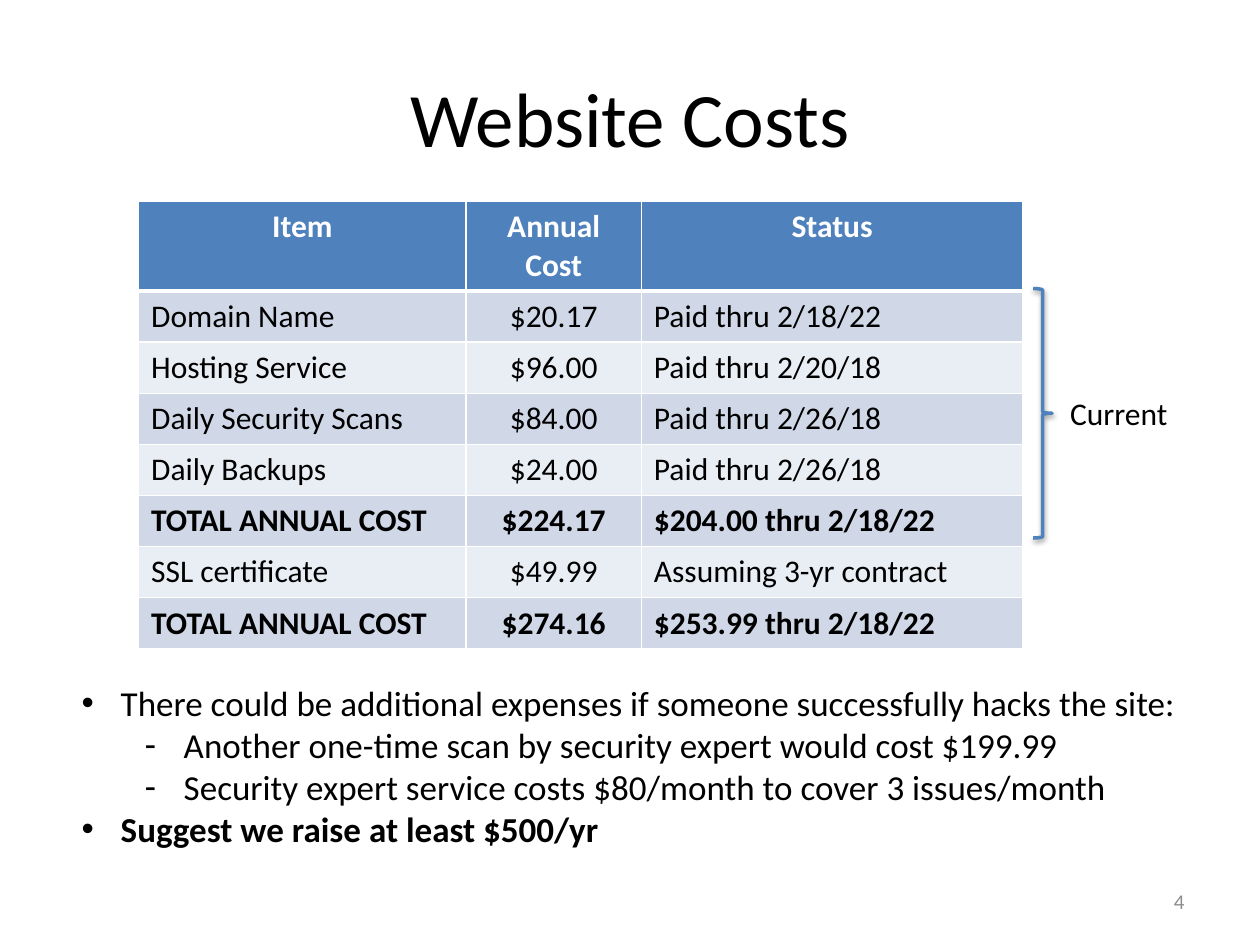
from dataclasses import dataclass

from lxml import etree
from pptx import Presentation
from pptx.dml.color import RGBColor
from pptx.enum.shapes import MSO_SHAPE
from pptx.enum.text import MSO_ANCHOR, PP_ALIGN
from pptx.oxml import parse_xml
from pptx.oxml.ns import nsdecls, qn
from pptx.util import Inches, Pt

LEFT, CENTER, RIGHT = PP_ALIGN.LEFT, PP_ALIGN.CENTER, PP_ALIGN.RIGHT
TOP, MIDDLE = MSO_ANCHOR.TOP, MSO_ANCHOR.MIDDLE
BRACE = MSO_SHAPE.RIGHT_BRACE
TITLE_ONLY = 5
GRID_COLS, GRID_ROWS = 100, 75  # square grid cells


@dataclass(frozen=True)
class Theme:
    font: str = "Calibri"
    ink: str = "000000"
    paper: str = "FFFFFF"
    accent: str = "4F81BD"
    bands: tuple = ("D0D8E8", "E9EDF4")
    muted: str = "8C8C8C"
    title: int = 44
    bullet: int = 20
    body: int = 18
    small: int = 12


@dataclass(frozen=True)
class Box:
    col: float
    row: float
    cols: float
    rows: float

    def emu(self) -> tuple:
        return tuple(cells(n) for n in (self.col, self.row, self.cols, self.rows))


@dataclass(frozen=True)
class Cost:
    item: str
    annual: str
    status: str
    total: bool = False


@dataclass(frozen=True)
class Bullet:
    text: str
    level: int = 0
    bold: bool = False


T = Theme()
HEADINGS = ("Item", "Annual Cost", "Status")
COSTS = (
    Cost("Domain Name", "$20.17", "Paid thru 2/18/22"),
    Cost("Hosting Service", "$96.00", "Paid thru 2/20/18"),
    Cost("Daily Security Scans", "$84.00", "Paid thru 2/26/18"),
    Cost("Daily Backups", "$24.00", "Paid thru 2/26/18"),
    Cost("TOTAL ANNUAL COST", "$224.17", "$204.00 thru 2/18/22", True),
    Cost("SSL certificate", "$49.99", "Assuming 3-yr contract"),
    Cost("TOTAL ANNUAL COST", "$274.16", "$253.99 thru 2/18/22", True),
)
BULLETS = (
    Bullet("There could be additional expenses if someone successfully hacks the site:"),
    Bullet("Another one-time scan by security expert would cost $199.99", 1),
    Bullet("Security expert service costs $80/month to cover 3 issues/month", 1),
    Bullet("Suggest we raise at least $500/yr", bold=True),
)


def cells(n: float) -> int:
    return Inches(n * 10 / GRID_COLS)


def place(sp, box: Box) -> None:
    sp.left, sp.top, sp.width, sp.height = box.emu()


def write(p, text: str, size: int, color: str = T.ink, bold: bool = False, align=LEFT) -> None:
    p.alignment = align
    r = p.add_run()
    r.text = text
    r.font.name, r.font.size, r.font.bold = T.font, Pt(size), bold
    r.font.color.rgb = RGBColor.from_string(color)


def add_text_frame(s, box: Box, anchor=TOP):
    tf = s.shapes.add_textbox(*box.emu()).text_frame
    tf.word_wrap, tf.vertical_anchor = True, anchor
    return tf


def fill_cell(cell, text: str, fill: str, color: str, bold: bool, align, top: int, bottom: int) -> None:
    tcPr = cell._tc.get_or_add_tcPr()
    for side, width in (("L", 1), ("R", 1), ("T", top), ("B", bottom)):
        tcPr.append(parse_xml(
            f'<a:ln{side} {nsdecls("a")} w="{Pt(width)}"><a:solidFill>'
            f'<a:srgbClr val="{T.paper}"/></a:solidFill></a:ln{side}>'))
    cell.fill.solid()
    cell.fill.fore_color.rgb = RGBColor.from_string(fill)
    write(cell.text_frame.paragraphs[0], text, T.body, color, bold, align)


def add_cost_table(s, box: Box, widths: tuple) -> None:
    table = s.shapes.add_table(len(COSTS) + 1, len(widths), *box.emu()).table
    for column, width in zip(table.columns, widths):
        column.width = cells(width)
    for i, row in enumerate(table.rows):
        row.height = cells(7.1) if i == 0 else Pt(29.2)
    for c, heading in enumerate(HEADINGS):
        fill_cell(table.cell(0, c), heading, T.accent, T.paper, True, CENTER, 1, 3)
    for i, cost in enumerate(COSTS):
        for c, text in enumerate((cost.item, cost.annual, cost.status)):
            fill_cell(table.cell(i + 1, c), text, T.bands[i % 2], T.ink, cost.total,
                      CENTER if c == 1 else LEFT, 3 if i == 0 else 1, 1)


def add_brace(s, box: Box) -> None:
    sp = s.shapes.add_shape(BRACE, *box.emu())
    sp.fill.background()
    sp.line.color.rgb = RGBColor.from_string(T.accent)
    sp.line.width = Pt(2)
    sp.shadow.inherit = False
    effects = sp._element.spPr.find(qn("a:effectLst"))
    shadow = etree.SubElement(effects, qn("a:outerShdw"), blurRad=str(Pt(3.1)),
                              dist=str(Pt(1.6)), dir="5400000", rotWithShape="0")
    color = etree.SubElement(shadow, qn("a:srgbClr"), val=T.ink)
    etree.SubElement(color, qn("a:alpha"), val="38000")


def add_bullets(s, box: Box) -> None:
    tf = add_text_frame(s, box)
    for i, bullet in enumerate(BULLETS):
        p = tf.paragraphs[0] if i == 0 else tf.add_paragraph()
        write(p, bullet.text, T.bullet, bold=bullet.bold)
        p.level = bullet.level
        pPr = p._p.get_or_add_pPr()
        pPr.set("marL", str(cells(3.1 + 5 * bullet.level)))
        pPr.set("indent", str(-cells(3.1)))
        etree.SubElement(pPr, qn("a:buFont"), typeface="Arial")
        etree.SubElement(pPr, qn("a:buChar"), char="•-"[bullet.level])


def main() -> None:
    prs = Presentation()
    prs.slide_width, prs.slide_height = cells(GRID_COLS), cells(GRID_ROWS)
    s = prs.slides.add_slide(prs.slide_layouts[TITLE_ONLY])

    # Title
    title = s.shapes.title
    place(title, Box(5, 3, 90, 12.5))
    title.text_frame.vertical_anchor = MIDDLE
    write(title.text_frame.paragraphs[0], "Website Costs", T.title, align=CENTER)

    # Costs, with a brace over the current ones
    add_cost_table(s, Box(11, 16, 70.2, 35.4), (26, 13.9, 30.3))
    add_brace(s, Box(82, 22.9, 1.5, 19.8))
    label = add_text_frame(s, Box(82.6, 30.8, 12.4, 4))
    write(label.paragraphs[0], "Current", T.body, align=CENTER)

    # Remarks
    add_bullets(s, Box(5.5, 53.6, 90.9, 14.5))

    # Page number
    number = add_text_frame(s, Box(71.7, 69.5, 23.3, 4), MIDDLE)
    write(number.paragraphs[0], "4", T.small, T.muted, align=RIGHT)

    prs.save("out.pptx")


if __name__ == "__main__":
    main()
